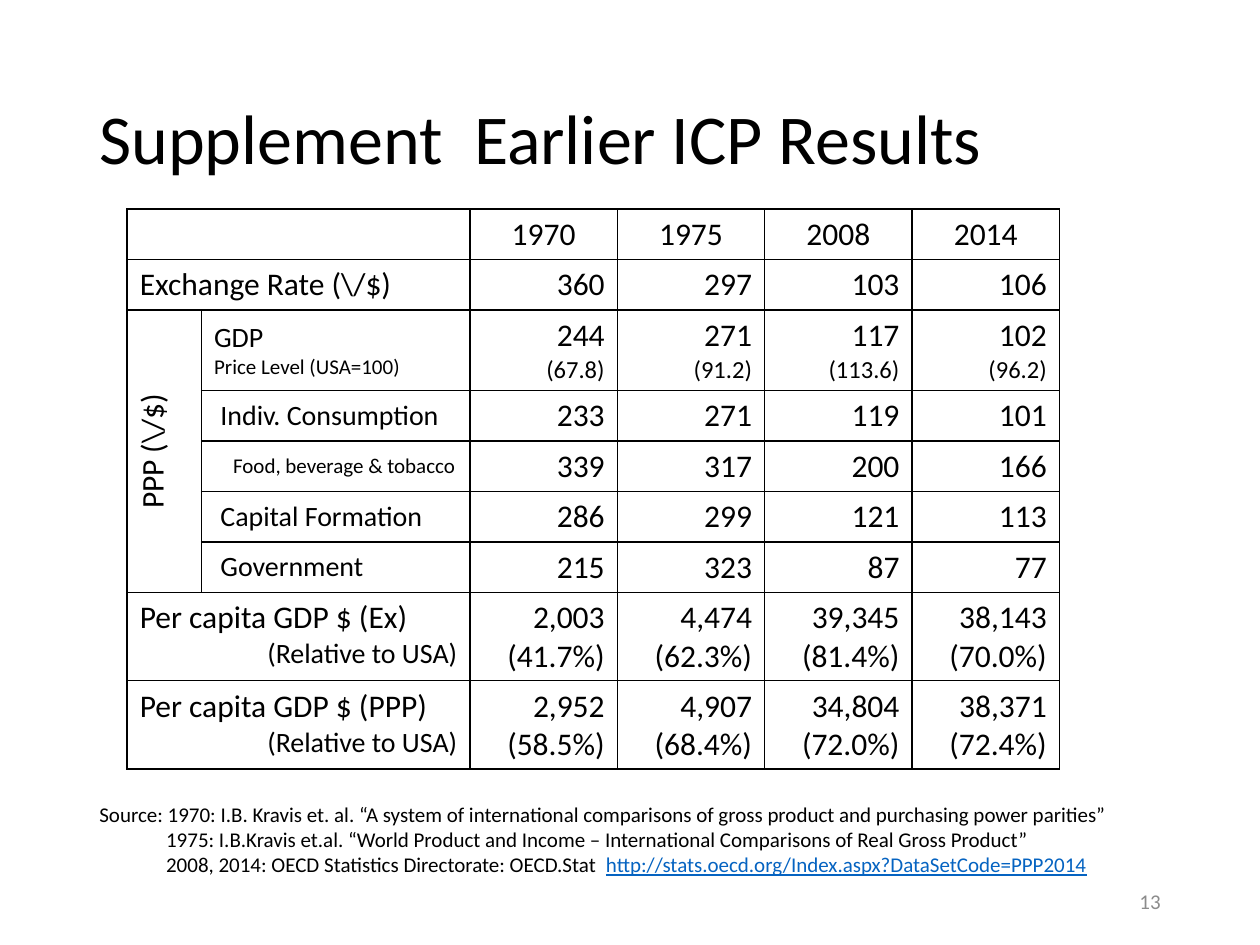
"""Builds a slide with a table of earlier price comparison results."""
import pptx
import pptx.util
import pptx.dml.color
import pptx.enum.text
import pptx.oxml

Inches = pptx.util.Inches
Pt = pptx.util.Pt
ALIGN = pptx.enum.text.PP_ALIGN
ANCHOR = pptx.enum.text.MSO_ANCHOR
NS = "http://schemas.openxmlformats.org/drawingml/2006/main"


def color(code):
    return pptx.dml.color.RGBColor.from_string(code)


class Deck:
    font = "Calibri"
    ink = "000000"
    gray = "8C8C8C"
    link = "0563C1"

    def __init__(self, prs):
        self.slide = prs.slides.add_slide(prs.slide_layouts[6])

    def run(self, para, text, size, code=None, under=None):
        run = para.add_run()
        run.text = text
        run.font.name = self.font
        run.font.size = Pt(size)
        run.font.color.rgb = color(code or self.ink)
        run.font.underline = under

    def fill(self, frame, lines):
        for i, (runs, align, indent) in enumerate(lines):
            para = frame.add_paragraph() if i else frame.paragraphs[0]
            para.alignment = align
            if indent:
                props = para._p.get_or_add_pPr()
                props.set("marL", str(Inches(indent)))
                props.set("indent", "0")
            for run in runs:
                self.run(para, *run)

    def text(self, box, lines, anchor=ANCHOR.TOP):
        frame = self.slide.shapes.add_textbox(*map(Inches, box)).text_frame
        frame.word_wrap = True
        frame.vertical_anchor = anchor
        self.fill(frame, lines)
        return frame

    def table(self, box, cols, rows):
        shape = self.slide.shapes.add_table(len(rows), len(cols), *map(Inches, box))
        grid = shape.table
        grid.first_row = grid.horz_banding = False
        for col, width in zip(grid.columns, cols):
            col.width = Inches(width)
        for row, height in zip(grid.rows, rows):
            row.height = Inches(height)
        for cell in grid.iter_cells():
            self.frame(cell)
        return grid

    def frame(self, cell):
        props = cell._tc.get_or_add_tcPr()
        for i, side in enumerate("LRTB"):
            props.insert(i, pptx.oxml.parse_xml(
                f'<a:ln{side} xmlns:a="{NS}" w="12700"><a:solidFill>'
                f'<a:srgbClr val="{self.ink}"/></a:solidFill></a:ln{side}>'))
        cell.fill.background()

    def cell(self, cell, lines, anchor=ANCHOR.TOP):
        cell.vertical_anchor = anchor
        self.fill(cell.text_frame, lines)


def line(text, size, align=ALIGN.LEFT, indent=0):
    return [(text, size)], align, indent


def pair(head):
    return [line(head, 18), line("(Relative to USA)", 16, ALIGN.RIGHT)]


HEADS = [
    [],
    [line(r"Exchange Rate (\/$)", 18)],
    [line("GDP", 16), line("Price Level (USA=100)", 12)],
    [line("Indiv. Consumption", 16, indent=0.05)],
    [line("Food, beverage & tobacco", 12, indent=0.15)],
    [line("Capital Formation", 16, indent=0.05)],
    [line("Government", 16, indent=0.05)],
    pair("Per capita GDP $ (Ex)"),
    pair("Per capita GDP $ (PPP)"),
]
DATA = [
    ["1970", "1975", "2008", "2014"],
    ["360", "297", "103", "106"],
    ["244 (67.8)", "271 (91.2)", "117 (113.6)", "102 (96.2)"],
    ["233", "271", "119", "101"],
    ["339", "317", "200", "166"],
    ["286", "299", "121", "113"],
    ["215", "323", "87", "77"],
    ["2,003 (41.7%)", "4,474 (62.3%)", "39,345 (81.4%)", "38,143 (70.0%)"],
    ["2,952 (58.5%)", "4,907 (68.4%)", "34,804 (72.0%)", "38,371 (72.4%)"],
]
PPP = range(2, 7)


def results(deck):
    rows = [0.4, 0.4, 0.64] + [0.4] * 4 + [0.7] * 2
    grid = deck.table((1.01, 1.66, 7.4, 4.47), [0.59, 2.13] + [1.17] * 4, rows)
    for r, (head, vals) in enumerate(zip(HEADS, DATA)):
        inner = r in PPP
        anchor = ANCHOR.MIDDLE if inner else ANCHOR.TOP
        if not inner:
            grid.cell(r, 0).merge(grid.cell(r, 1))
        deck.cell(grid.cell(r, int(inner)), head, anchor)
        align = ALIGN.RIGHT if r else ALIGN.CENTER
        for c, val in enumerate(vals, 2):
            parts = val.split()
            sizes = (18, 14 if inner else 18)
            lines = [line(t, s, align) for t, s in zip(parts, sizes)]
            deck.cell(grid.cell(r, c), lines, anchor)
    side = grid.cell(PPP[0], 0)
    side.merge(grid.cell(PPP[-1], 0))
    deck.cell(side, [line(r"PPP (\/$)", 18, ALIGN.CENTER)], ANCHOR.MIDDLE)
    side._tc.get_or_add_tcPr().set("vert", "vert270")


def main():
    prs = pptx.Presentation()
    prs.slide_width, prs.slide_height = Inches(10), Inches(7.5)
    deck = Deck(prs)
    title = deck.text((0.69, 0.4, 8.62, 1.45),
                      [line("Supplement  Earlier ICP Results", 40)], ANCHOR.MIDDLE)
    title.paragraphs[0].line_spacing = 0.9
    deck.text((7.06, 6.95, 2.25, 0.4),
              [([("13", 12, deck.gray)], ALIGN.RIGHT, 0)], ANCHOR.MIDDLE)
    results(deck)
    deck.text((0.69, 6.31, 8.28, 0.71), [
        line("Source: 1970: I.B. Kravis et. al. “A system of international comparisons "
             "of gross product and purchasing power parities”", 12),
        line("1975: I.B.Kravis et.al. “World Product and Income – International "
             "Comparisons of Real Gross Product”", 12, indent=0.53),
        ([("2008, 2014: OECD Statistics Directorate: OECD.Stat  ", 12),
          ("http://stats.oecd.org/Index.aspx?DataSetCode=PPP2014", 12, deck.link, True)],
         ALIGN.LEFT, 0.53),
    ])
    prs.save("out.pptx")


if __name__ == "__main__":
    main()
